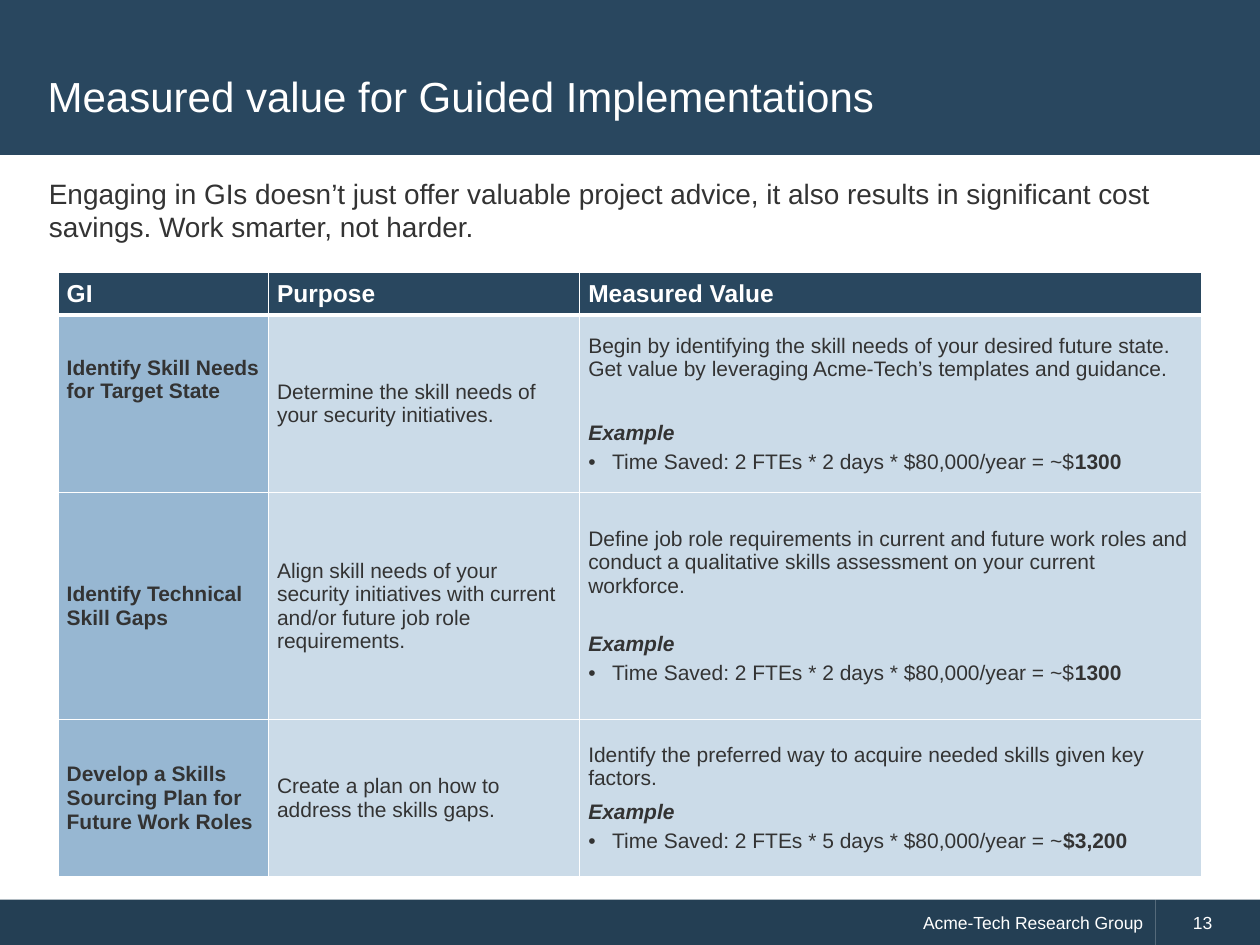
from lxml.etree import SubElement
from pptx import Presentation
from pptx.dml.color import RGBColor
from pptx.enum.shapes import MSO_SHAPE as Shape
from pptx.enum.text import MSO_ANCHOR as Anchor, PP_ALIGN as Align
from pptx.oxml.ns import qn
from pptx.util import Inches, Pt

WHITE = RGBColor(0xFF, 0xFF, 0xFF)
INK = RGBColor(0x33, 0x33, 0x33)
NAVY = RGBColor(0x29, 0x47, 0x5F)
FOOTER = RGBColor(0x24, 0x3F, 0x54)
MID_BLUE = RGBColor(0x97, 0xB7, 0xD2)
PALE_BLUE = RGBColor(0xCB, 0xDB, 0xE8)

COLUMN_WIDTHS = (1.67, 2.47, 4.94)
ROW_HEIGHTS = (0.34, 1.41, 1.8, 1.25)
HEADERS = ("GI", "Purpose", "Measured Value")
IMPLEMENTATIONS = (
    ("Identify Skill Needs for Target State",
     "Determine the skill needs of your security initiatives.",
     "Begin by identifying the skill needs of your desired future state. "
     "Get value by leveraging Acme-Tech’s templates and guidance.",
     23, "Time Saved: 2 FTEs * 2 days * $80,000/year = ~$", "1300"),
    ("Identify Technical Skill Gaps",
     "Align skill needs of your security initiatives with current and/or "
     "future job role requirements.",
     "Define job role requirements in current and future work roles and "
     "conduct a qualitative skills assessment on your current workforce.",
     20, "Time Saved: 2 FTEs * 2 days * $80,000/year = ~$", "1300"),
    ("Develop a Skills Sourcing Plan for Future Work Roles",
     "Create a plan on how to address the skills gaps.",
     "Identify the preferred way to acquire needed skills given key factors.",
     6, "Time Saved: 2 FTEs * 5 days * $80,000/year = ~", "$3,200"),
)


def add_span(para, text, size, color, bold=False, italic=False):
    """Add one run of Arial text to a paragraph."""
    span = para.add_run()
    span.text = text
    font = span.font
    font.name, font.size, font.bold, font.italic = "Arial", Pt(size), bold, italic
    font.color.rgb = color


def set_indent(para, left, hanging=0):
    """Set the left margin and hanging indent of a paragraph."""
    properties = para._p.get_or_add_pPr()
    properties.set("marL", str(Inches(left)))
    properties.set("indent", str(-Inches(hanging)))
    return properties


def add_band(page, left, top, width, height, color):
    """Add a plain filled rectangle."""
    band = page.shapes.add_shape(
        Shape.RECTANGLE, Inches(left), Inches(top), Inches(width), Inches(height))
    band.shadow.inherit = False
    band.fill.solid()
    band.fill.fore_color.rgb = color
    band.line.fill.background()
    return band


def add_footer_part(page, left, width, text, align, indent=0):
    """Add one part of the footer bar with its label."""
    frame = add_band(page, left, 7.14, width, 0.37, FOOTER).text_frame
    frame.vertical_anchor = Anchor.MIDDLE
    para = frame.paragraphs[0]
    para.alignment = align
    set_indent(para, indent)
    add_span(para, text, 10, WHITE)


def add_text(page, left, top, width, height, text, size, color,
             anchor=Anchor.TOP, space_before=0):
    """Add a wrapping text box with one paragraph."""
    box = page.shapes.add_textbox(
        Inches(left), Inches(top), Inches(width), Inches(height))
    frame = box.text_frame
    frame.word_wrap = True
    frame.vertical_anchor = anchor
    para = frame.paragraphs[0]
    para.space_before = Pt(space_before)
    add_span(para, text, size, color)


def add_border(cell, side, width):
    """Draw one white cell border."""
    properties = cell._tc.get_or_add_tcPr()
    line = SubElement(properties, qn(f"a:ln{side}"), w=str(Pt(width)))
    fill = SubElement(line, qn("a:solidFill"))
    SubElement(fill, qn("a:srgbClr"), val=str(WHITE))


def format_cell(cell, color, top=1, bottom=1):
    """Set the borders, fill, anchor and margins of a cell and return its first paragraph."""
    for side, width in (("L", 1), ("R", 1), ("T", top), ("B", bottom)):
        add_border(cell, side, width)
    cell.fill.solid()
    cell.fill.fore_color.rgb = color
    cell.vertical_anchor = Anchor.MIDDLE
    cell.margin_left = cell.margin_right = Inches(0.07)
    cell.margin_top = cell.margin_bottom = 0
    return cell.text_frame.paragraphs[0]


def write_value(para, frame, summary, gap, saving, amount):
    """Write a summary followed by its worked example."""
    para.space_after = Pt(gap)
    add_span(para, summary, 12, INK)
    heading = frame.add_paragraph()
    heading.space_after = Pt(3)
    add_span(heading, "Example", 12, INK, bold=True, italic=True)
    item = frame.add_paragraph()
    item.space_after = Pt(3)
    properties = set_indent(item, 0.19, 0.19)
    SubElement(properties, qn("a:buFont"), typeface="Arial")
    SubElement(properties, qn("a:buChar"), char="•")
    add_span(item, saving, 12, INK)
    add_span(item, amount, 12, INK, bold=True)


def add_value_table(page):
    """Add the table of implementations and their measured value."""
    table = page.shapes.add_table(
        len(ROW_HEIGHTS), len(COLUMN_WIDTHS), Inches(0.46), Inches(2.16),
        Inches(sum(COLUMN_WIDTHS)), Inches(sum(ROW_HEIGHTS))).table
    for column, width in zip(table.columns, COLUMN_WIDTHS):
        column.width = Inches(width)
    for row, height in zip(table.rows, ROW_HEIGHTS):
        row.height = Inches(height)
    for column, header in enumerate(HEADERS):
        para = format_cell(table.cell(0, column), NAVY, bottom=3)
        add_span(para, header, 14, WHITE, bold=True)
    for row, (name, purpose, *value) in enumerate(IMPLEMENTATIONS, 1):
        top = 3 if row == 1 else 1
        name_cell, purpose_cell, value_cell = table.rows[row].cells
        add_span(format_cell(name_cell, MID_BLUE, top), name, 12, INK, bold=True)
        para = format_cell(purpose_cell, PALE_BLUE, top)
        para.space_after = Pt(3)
        add_span(para, purpose, 12, INK)
        para = format_cell(value_cell, PALE_BLUE, top)
        write_value(para, value_cell.text_frame, *value)
    table.cell(1, 0).margin_bottom = Inches(0.38)


def main():
    """Build the slide and save it."""
    deck = Presentation()
    deck.slide_width, deck.slide_height = Inches(10), Inches(7.5)
    page = deck.slides.add_slide(deck.slide_layouts[6])
    add_footer_part(page, 0, 9.17, "Acme-Tech Research Group", Align.RIGHT)
    add_footer_part(page, 9.17, 0.83, "13", Align.LEFT, indent=0.2)
    add_band(page, 0, 0, 10, 1.23, NAVY)
    add_value_table(page)
    add_text(page, 0.29, 1.35, 9.43, 0.72,
             "Engaging in GIs doesn’t just offer valuable project advice, it also "
             "results in significant cost savings. Work smarter, not harder.",
             16, INK, space_before=3.2)
    add_text(page, 0.28, 0.28, 9.43, 0.96,
             "Measured value for Guided Implementations", 24, WHITE, Anchor.MIDDLE)
    deck.save("out.pptx")


if __name__ == "__main__":
    main()
